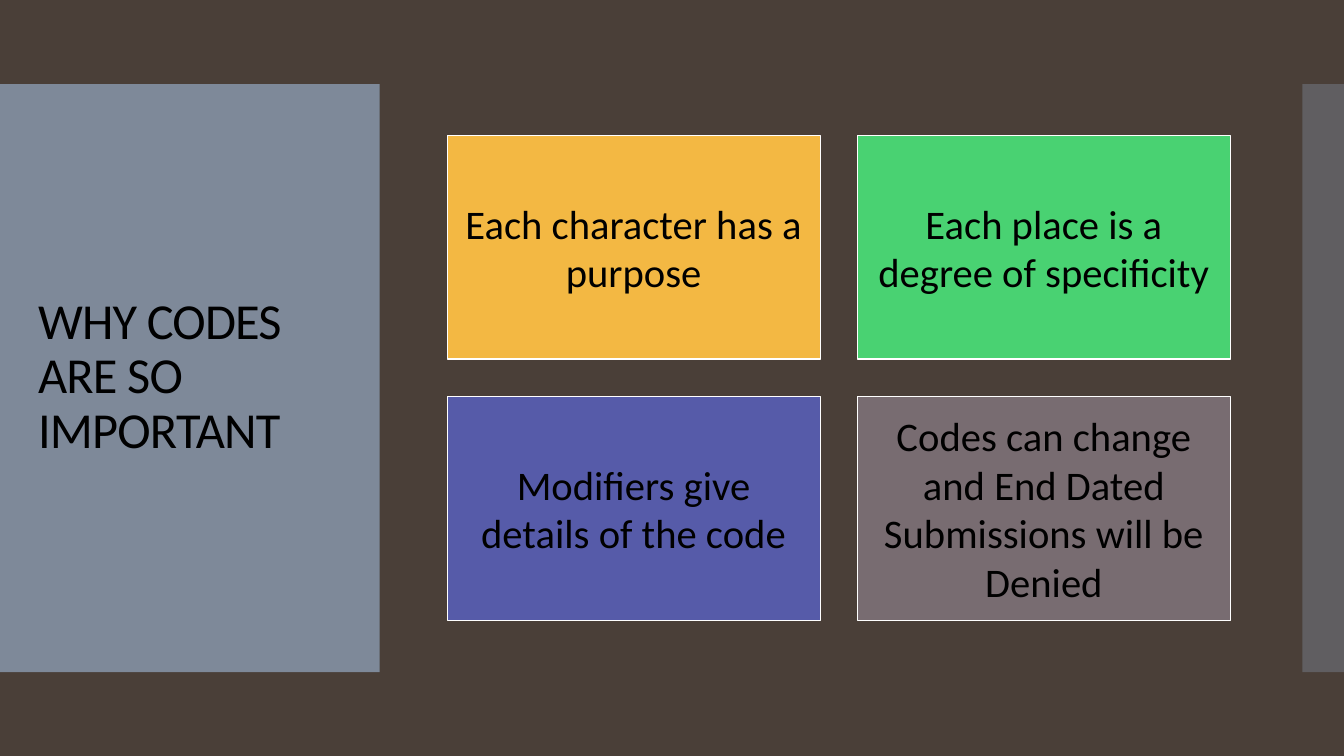
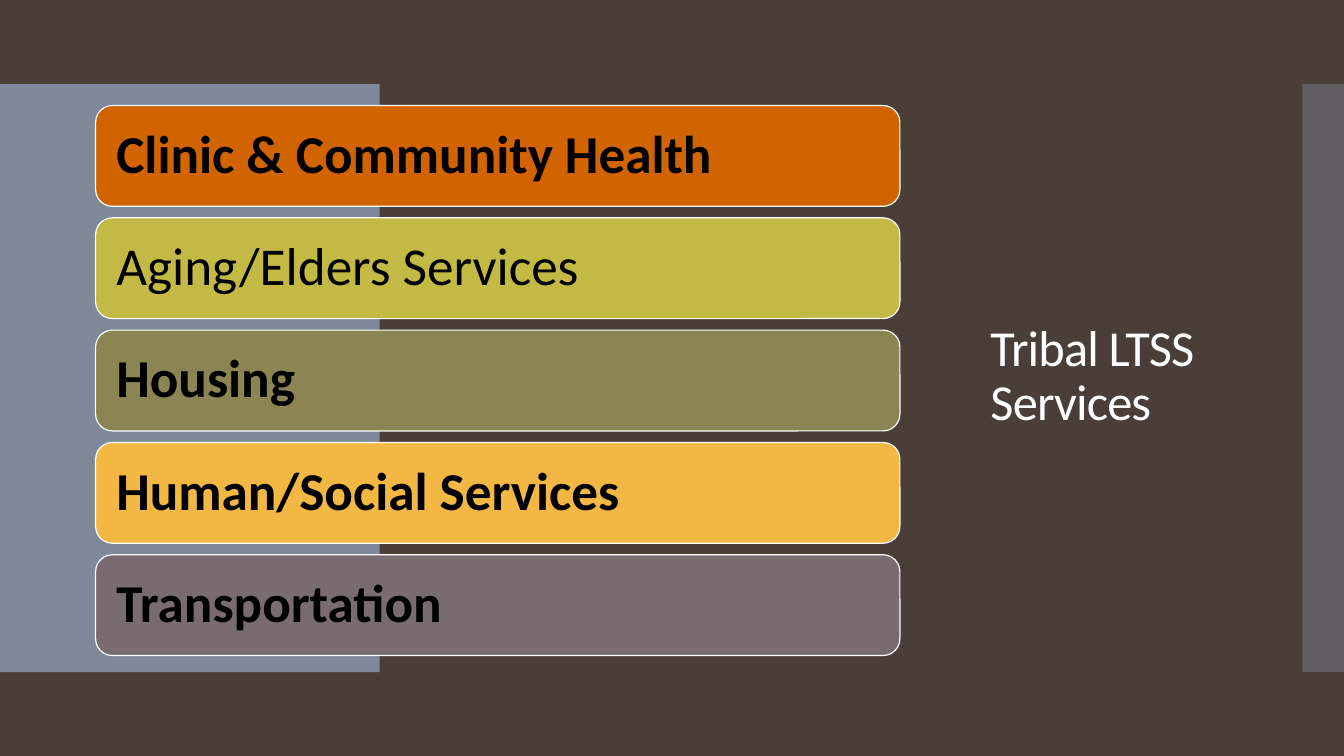
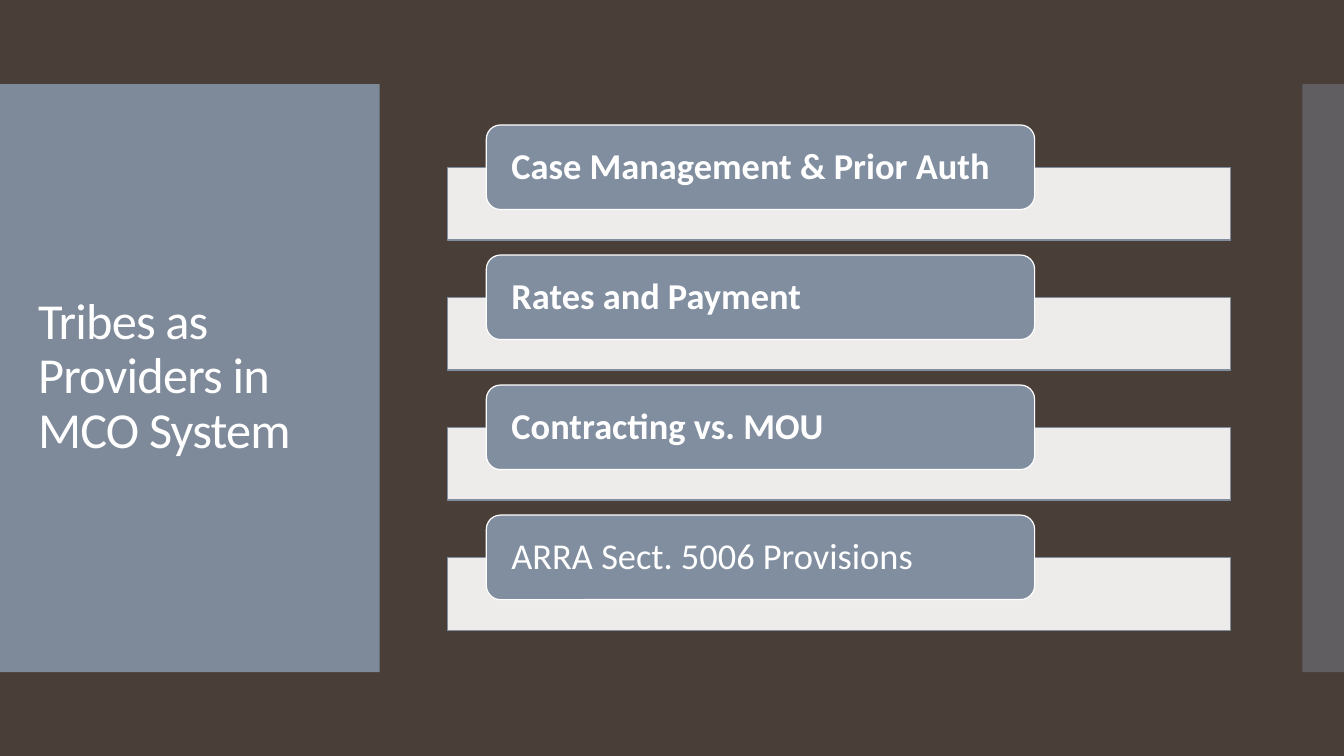
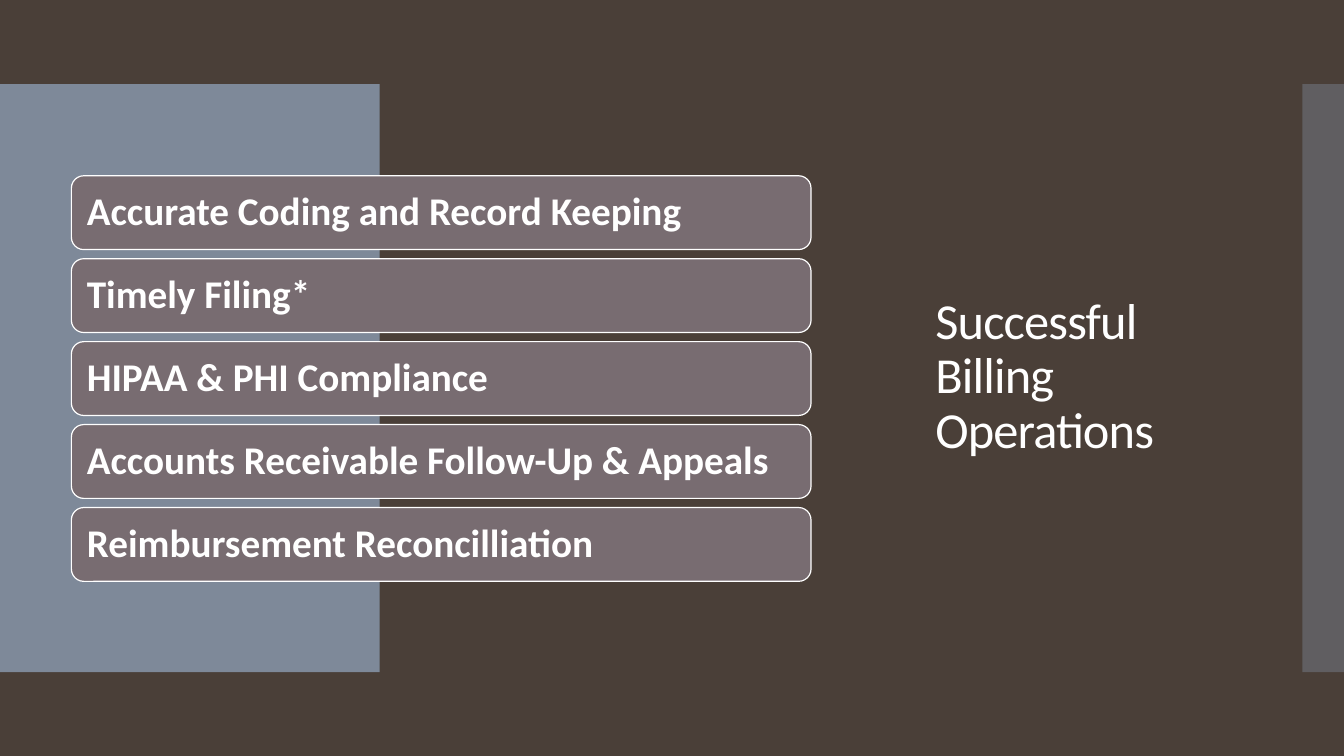
import pptx
import pptx.dml.color
import pptx.enum.shapes
import pptx.enum.text
import pptx.oxml.ns
import pptx.util
from lxml import etree

Cm = pptx.util.Cm
Pt = pptx.util.Pt
RECTANGLE = pptx.enum.shapes.MSO_SHAPE.RECTANGLE
ROUNDED = pptx.enum.shapes.MSO_SHAPE.ROUNDED_RECTANGLE
LEFT = pptx.enum.text.PP_ALIGN.LEFT
CENTER = pptx.enum.text.PP_ALIGN.CENTER

# Shared look
FONT = "Calibri"
BROWN, SLATE, MAUVE, AMBER = "4A3F38", "818E9F", "786C71", "F3B843"
GREEN, INDIGO, ORANGE, LIME, OLIVE = "49D272", "565BA9", "D26400", "C3BA45", "8A8552"
WHITE, BLACK = "FFFFFF", "000000"

# Boxes in centimetres: left, top, width, height
SLIDE_SIZE = (33.87, 19.05)
BANDS = [((0, 2.12, 9.57, 14.82), 95), ((32.82, 2.12, 1.05, 14.82), 40)]
TITLE_TOP, TITLE_WIDTH, TITLE_HEIGHT = 3.12, 8.18, 12.78
TITLE_LEFT = 0.71


def set_color(color_owner, color, opacity=100):
    """Colour a fill or a font; opacity is in percent."""
    if hasattr(color_owner, "solid"):
        color_owner.solid()
        target = color_owner.fore_color
    else:
        target = color_owner.color
    target.rgb = pptx.dml.color.RGBColor.from_string(color)
    if opacity < 100:
        rgb = next(color_owner._xPr.iter(pptx.oxml.ns.qn("a:srgbClr")))
        alpha = etree.SubElement(rgb, pptx.oxml.ns.qn("a:alpha"))
        alpha.set("val", str(opacity * 1000))


def write_text(shape, text, size, color, bold=False, align=LEFT,
               line_spacing=0.9, tracking=0, insets=(0.25, 0.13)):
    """Fill a shape with one paragraph, centred vertically."""
    frame = shape.text_frame
    frame.word_wrap = True
    frame.auto_size = pptx.enum.text.MSO_AUTO_SIZE.NONE
    frame.vertical_anchor = pptx.enum.text.MSO_ANCHOR.MIDDLE
    frame.margin_left = frame.margin_right = Cm(insets[0])
    frame.margin_top = frame.margin_bottom = Cm(insets[1])
    paragraph = frame.paragraphs[0]
    paragraph.text = text
    paragraph.alignment = align
    paragraph.line_spacing = line_spacing
    for run in paragraph.runs:
        run.font.name = FONT
        run.font.size = Pt(size)
        run.font.bold = bold
        set_color(run.font.fill, color)
        if tracking:
            run.font._element.set("spc", str(round(tracking * 100)))


def add_block(slide, kind, box, fill, opacity=100, line=WHITE):
    shape = slide.shapes.add_shape(kind, *map(Cm, box))
    shape.shadow.inherit = False
    set_color(shape.fill, fill, opacity)
    if line:
        set_color(shape.line.fill, line)
        shape.line.width = Pt(0.85)
    else:
        shape.line.fill.background()
    return shape


def prepare_layout(presentation, layout):
    """Put the background and the side bands on the layout."""
    set_color(layout.background.fill, BROWN)
    slide = presentation.slides[0]
    for number, (box, opacity) in enumerate(BANDS):
        band = add_block(slide, RECTANGLE, box, SLATE, opacity, line=None)
        band.name = f"Side band {number + 1}"
        band.element.nvSpPr.cNvPr.set("id", str(100 + number))
        layout.shapes.element.insert(2 + number, band.element)


def add_title(slide, text, left=TITLE_LEFT, color=WHITE):
    title = slide.shapes.title
    title.left, title.top = Cm(left), Cm(TITLE_TOP)
    title.width, title.height = Cm(TITLE_WIDTH), Cm(TITLE_HEIGHT)
    write_text(title, text, 36, color, tracking=-0.6)


def add_card_grid(slide, box, cards, columns=2, gap=0.94):
    """Equal rectangles in rows; cards are (text, fill)."""
    left, top, width, height = box
    rows = -(-len(cards) // columns)
    card_width = (width - gap * (columns - 1)) / columns
    card_height = (height - gap * (rows - 1)) / rows
    for index, (text, fill) in enumerate(cards):
        row, column = divmod(index, columns)
        card = add_block(slide, RECTANGLE,
                         (left + column * (card_width + gap),
                          top + row * (card_height + gap),
                          card_width, card_height), fill)
        write_text(card, text, 29, BLACK, align=CENTER, line_spacing=1,
                   insets=(0.3, 0.3))


def add_bar_stack(slide, box, bars, bar_height, size, color, inset):
    """Rounded bars at an equal pitch; bars are (text, fill, bold)."""
    left, top, width, height = box
    pitch = (height - bar_height) / (len(bars) - 1)
    for index, (text, fill, bold) in enumerate(bars):
        bar = add_block(slide, ROUNDED,
                        (left, top + index * pitch, width, bar_height), fill)
        write_text(bar, text, size, color, bold=bold, insets=(inset, inset))


def add_tabbed_panels(slide, box, tabs):
    """Pale panels, each with a tab over its top edge; tabs are (text, bold)."""
    left, top, width, height = box
    tab_height, panel_drop, panel_height = 2.13, 1.07, 1.83
    pitch = (height - panel_drop - panel_height) / (len(tabs) - 1)
    for index, (text, bold) in enumerate(tabs):
        tab_top = top + index * pitch
        add_block(slide, RECTANGLE,
                  (left, tab_top + panel_drop, width, panel_height),
                  WHITE, opacity=90, line=SLATE)
        tab = add_block(slide, ROUNDED,
                        (left + width * 0.05, tab_top, width * 0.7, tab_height),
                        SLATE)
        write_text(tab, text, 26, WHITE, bold=bold, insets=(0.53, 0))


def main():
    presentation = pptx.Presentation()
    presentation.slide_width, presentation.slide_height = map(Cm, SLIDE_SIZE)
    layout = presentation.slide_layouts[5]
    codes, services, providers, billing = [
        presentation.slides.add_slide(layout) for _ in range(4)]
    prepare_layout(presentation, layout)

    # Importance of codes
    add_title(codes, "WHY CODES ARE SO IMPORTANT", color=BLACK)
    add_card_grid(codes, (11.27, 3.41, 19.74, 12.22), [
        ("Each character has a purpose", AMBER),
        ("Each place is a degree of specificity", GREEN),
        ("Modifiers give details of the code", INDIGO),
        ("Codes can change and End Dated Submissions will be Denied", MAUVE),
    ])

    # Service areas
    add_title(services, "Tribal LTSS Services", left=24.71)
    add_bar_stack(services, (2.41, 2.66, 20.27, 13.86), [
        ("Clinic & Community Health", ORANGE, True),
        ("Aging/Elders Services", LIME, False),
        ("Housing", OLIVE, True),
        ("Human/Social Services", AMBER, True),
        ("Transportation", MAUVE, True),
    ], bar_height=2.54, size=38, color=BLACK, inset=0.4)

    # Provider topics
    add_title(providers, "Tribes as Providers in MCO System")
    add_tabbed_panels(providers, (11.27, 3.15, 19.74, 12.73), [
        ("Case Management & Prior Auth", True),
        ("Rates and Payment", True),
        ("Contracting vs. MOU", True),
        ("ARRA Sect. 5006 Provisions", False),
    ])

    # Billing steps
    add_title(billing, "Successful\vBilling Operations", left=23.32)
    steps = ["Accurate Coding and Record Keeping", "Timely Filing*",
             "HIPAA & PHI Compliance", "Accounts Receivable Follow-Up & Appeals",
             "Reimbursement Reconcilliation"]
    add_bar_stack(billing, (1.8, 4.43, 18.64, 10.22),
                  [(step, MAUVE, True) for step in steps],
                  bar_height=1.86, size=28, color=WHITE, inset=0.3)

    presentation.save("out.pptx")


if __name__ == "__main__":
    main()
